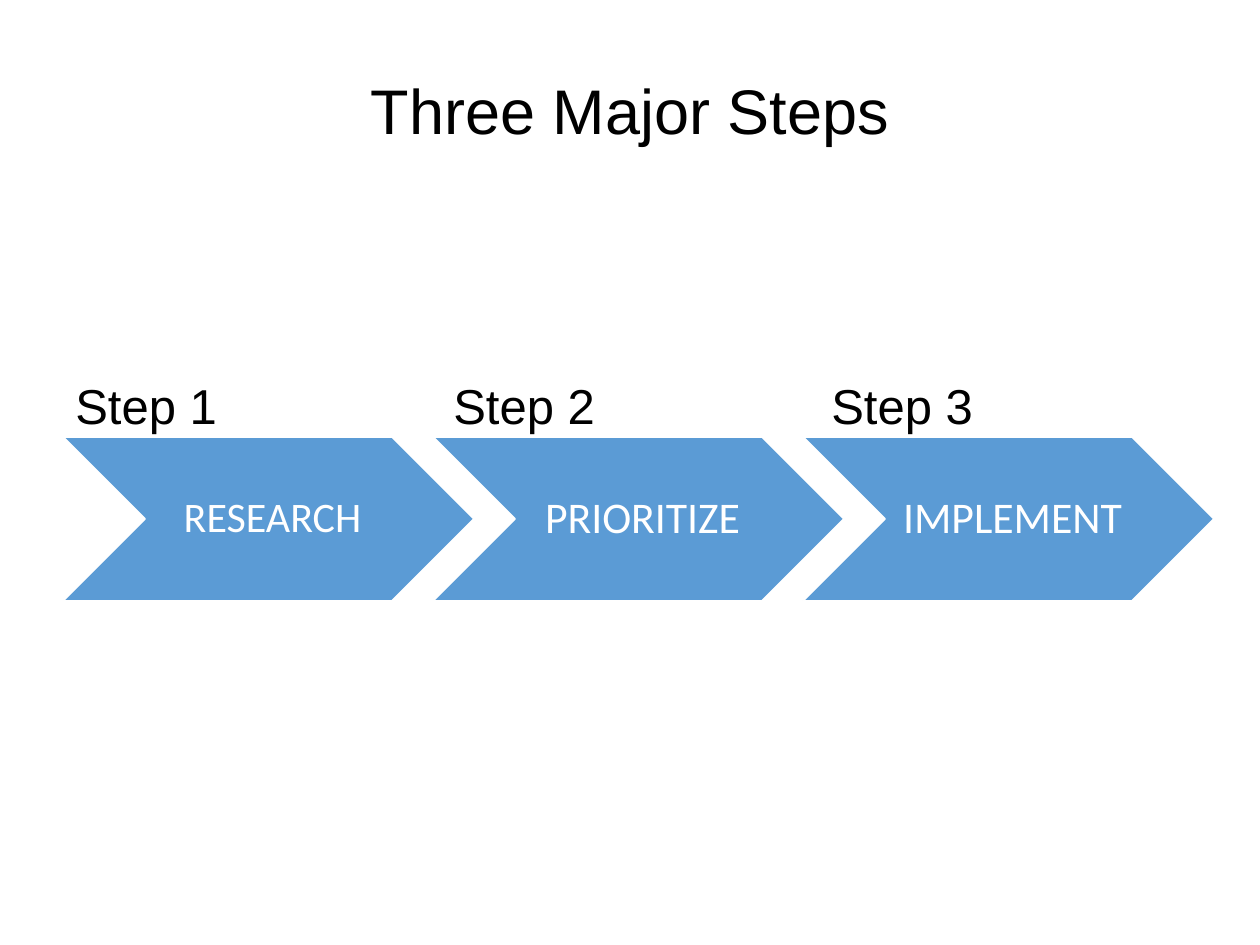
from pptx import Presentation
from pptx.dml.color import RGBColor
from pptx.enum import shapes, text
from pptx.util import Emu, Pt

COLORS = {"chevron": "5B9BD5", "white": "FFFFFF", "black": "000000"}
STEPS = [("RESEARCH", 24), ("PRIORITIZE", 25), ("IMPLEMENT", 25)]


def px(length):
    return Emu(round(length * 914400 / 126))


def format_paragraph(paragraph, font_name, size, color, alignment):
    paragraph.alignment = alignment
    paragraph.font.name = font_name
    paragraph.font.size = Pt(size)
    paragraph.font.color.rgb = RGBColor.from_string(COLORS[color])


presentation = Presentation()
presentation.slide_width, presentation.slide_height = px(1260), px(945)
slide = presentation.slides.add_slide(presentation.slide_layouts[5])

# Title
title = slide.shapes.title
title.left, title.top, title.width, title.height = px(87), px(57), px(1086), px(115)
title.text_frame.text = "Three Major Steps"
title.text_frame.vertical_anchor = text.MSO_ANCHOR.MIDDLE
paragraph = title.text_frame.paragraphs[0]
paragraph.line_spacing = 0.9
format_paragraph(paragraph, "Arial", 36, "black", text.PP_ALIGN.CENTER)

# Process chevrons
for index, (name, size) in enumerate(STEPS):
    chevron = slide.shapes.add_shape(
        shapes.MSO_SHAPE.CHEVRON, px(63 + 370 * index), px(437), px(411), px(164))
    chevron.shadow.inherit = False
    chevron.fill.solid()
    chevron.fill.fore_color.rgb = RGBColor.from_string(COLORS["chevron"])
    chevron.line.color.rgb = RGBColor.from_string(COLORS["white"])
    chevron.line.width = Pt(1)
    frame = chevron.text_frame
    frame.text = name
    frame.vertical_anchor = text.MSO_ANCHOR.MIDDLE
    frame.margin_left = px(13)
    frame.margin_top = frame.margin_right = frame.margin_bottom = px(5)
    paragraph = frame.paragraphs[0]
    paragraph.line_spacing = 0.9
    format_paragraph(paragraph, "Calibri", size, "white", text.PP_ALIGN.CENTER)

# Step labels above the chevrons
for index in range(len(STEPS)):
    label = slide.shapes.add_textbox(px(63 + 378 * index), px(369), px(262), px(72))
    label.text_frame.word_wrap = True
    label.text_frame.text = f"Step {index + 1}"
    format_paragraph(label.text_frame.paragraphs[0], "Arial", 28, "black",
                     text.PP_ALIGN.LEFT)

presentation.save("out.pptx")
